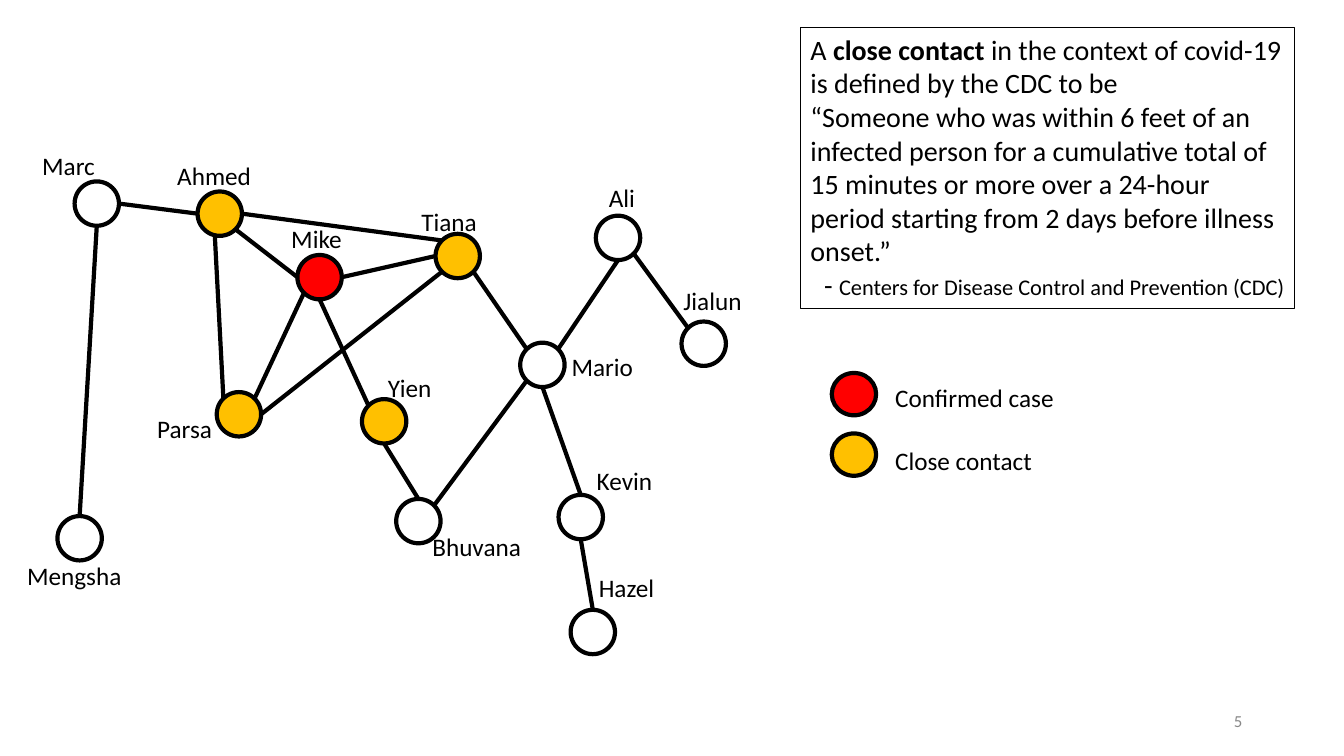
from pptx import Presentation
from pptx.dml.color import RGBColor
from pptx.enum.shapes import MSO_CONNECTOR, MSO_SHAPE
from pptx.enum.text import MSO_ANCHOR, PP_ALIGN
from pptx.oxml.ns import qn
from pptx.util import Inches, Pt

OVAL = MSO_SHAPE.OVAL
STRAIGHT = MSO_CONNECTOR.STRAIGHT
LEFT, RIGHT = PP_ALIGN.LEFT, PP_ALIGN.RIGHT
TOP, MIDDLE = MSO_ANCHOR.TOP, MSO_ANCHOR.MIDDLE

BLACK = RGBColor(0x00, 0x00, 0x00)
WHITE = RGBColor(0xFF, 0xFF, 0xFF)
GRAY = RGBColor(0x88, 0x88, 0x88)
RED = RGBColor(0xFF, 0x00, 0x00)
AMBER = RGBColor(0xFF, 0xC0, 0x00)

FONT = "Calibri"
NODE_SIZE = 0.44
LEGEND_HEIGHT = 0.42
LABEL_HEIGHT = 0.4

# name: (node left, node top, label left, label top, label width, fill)
PEOPLE = {
    "Marc": (0.74, 1.8, 0.32, 1.44, 0.73, WHITE),
    "Ahmed": (1.96, 1.9, 1.66, 1.54, 0.94, AMBER),
    "Mike": (2.95, 2.53, 2.79, 2.17, 0.82, RED),
    "Tiana": (4.32, 2.32, 4.08, 2.0, 1.09, AMBER),
    "Parsa": (2.15, 3.89, 1.46, 4.05, 0.82, AMBER),
    "Yien": (3.59, 3.96, 3.75, 3.64, 0.64, AMBER),
    "Mario": (5.16, 3.4, 5.57, 3.44, 0.82, WHITE),
    "Mengsha": (0.57, 5.12, 0.17, 5.51, 1.15, WHITE),
    "Bhuvana": (3.93, 4.95, 4.19, 5.22, 1.27, WHITE),
    "Ali": (5.91, 2.14, 5.94, 1.76, 0.46, WHITE),
    "Jialun": (6.76, 3.19, 6.68, 2.78, 0.79, WHITE),
    "Kevin": (5.54, 4.91, 5.82, 4.57, 0.78, WHITE),
    "Hazel": (5.66, 6.05, 5.84, 5.63, 0.81, WHITE),
}

SITES = {
    "top": (0.5, 0), "bottom": (0.5, 1), "left": (0, 0.5), "right": (1, 0.5),
    "top left": (0.15, 0.15), "top right": (0.85, 0.15),
    "bottom left": (0.15, 0.85), "bottom right": (0.85, 0.85),
    "lower left": (0.38, 0.85),
}

CONTACTS = [
    ("Marc", "right", "Ahmed", "left"),
    ("Marc", "bottom", "Mengsha", "top"),
    ("Ahmed", "bottom right", "Mike", "left"),
    ("Ahmed", "right", "Tiana", "top left"),
    ("Ahmed", "lower left", "Parsa", "top left"),
    ("Mike", "right", "Tiana", "left"),
    ("Mike", "bottom left", "Parsa", "top right"),
    ("Mike", "bottom", "Yien", "top left"),
    ("Tiana", "bottom left", "Parsa", "right"),
    ("Tiana", "bottom right", "Mario", "top left"),
    ("Yien", "bottom", "Bhuvana", "top"),
    ("Bhuvana", "top right", "Mario", "bottom left"),
    ("Mario", "top right", "Ali", "bottom"),
    ("Mario", "bottom", "Kevin", "top"),
    ("Ali", "bottom right", "Jialun", "top left"),
    ("Kevin", "bottom", "Hazel", "top"),
]

LEGEND = [
    ("Confirmed case", RED, 3.7, 3.74, 1.79),
    ("Close contact", AMBER, 4.3, 4.37, 1.57),
]


def set_attributes(target, values):
    for name, value in values.items():
        setattr(target, name, value)


def set_outline(line, width):
    line.color.rgb = BLACK
    line.width = Pt(width)


def set_fill(shape, color):
    shape.fill.solid()
    shape.fill.fore_color.rgb = color


def add_run(paragraph, text, size, color=BLACK, bold=False):
    run = paragraph.add_run()
    run.text = text
    set_attributes(run.font, {"name": FONT, "size": Pt(size), "bold": bold})
    run.font.color.rgb = color


def add_text_box(slide, left, top, width, height, anchor=TOP):
    box = slide.shapes.add_textbox(
        Inches(left), Inches(top), Inches(width), Inches(height))
    set_attributes(box.text_frame, {"word_wrap": True, "vertical_anchor": anchor})
    return box


def add_label(slide, text, left, top, width, size=18, color=BLACK,
              alignment=LEFT, anchor=TOP):
    box = add_text_box(slide, left, top, width, LABEL_HEIGHT, anchor)
    paragraph = box.text_frame.paragraphs[0]
    paragraph.alignment = alignment
    add_run(paragraph, text, size, color)


def add_circle(slide, left, top, color, height=NODE_SIZE):
    circle = slide.shapes.add_shape(
        OVAL, Inches(left), Inches(top), Inches(NODE_SIZE), Inches(height))
    circle.shadow.inherit = False
    set_fill(circle, color)
    set_outline(circle.line, 3)


def site_position(person, site):
    left, top = PEOPLE[person][:2]
    across, down = SITES[site]
    return Inches(left + across * NODE_SIZE), Inches(top + down * NODE_SIZE)


def add_contact(slide, person, site, other, other_site):
    connector = slide.shapes.add_connector(
        STRAIGHT, *site_position(person, site), *site_position(other, other_site))
    set_outline(connector.line, 3)
    properties = connector._element.spPr
    properties.append(properties.makeelement(qn("a:effectLst"), {}))


def add_definition(slide):
    box = add_text_box(slide, 7.94, 0.27, 4.9, 2.79)
    set_fill(box, WHITE)
    set_outline(box.line, 0.75)
    definition = box.text_frame.paragraphs[0]
    add_run(definition, "A ", 20)
    add_run(definition, "close contact ", 20, bold=True)
    add_run(definition, "in the context of covid-19 is defined by the CDC to be ", 20)
    definition.add_line_break()
    add_run(definition, "“Someone who was within 6 feet of an infected person for a "
            "cumulative total of 15 minutes or more over a 24-hour period "
            "starting from 2 days before illness onset.”", 20)
    credit = box.text_frame.add_paragraph()
    credit.alignment = RIGHT
    add_run(credit, "- ", 20)
    add_run(credit, "Centers for Disease Control and Prevention (CDC)", 16)


def main():
    presentation = Presentation()
    presentation.slide_width = Inches(13.33)
    presentation.slide_height = Inches(7.5)
    slide = presentation.slides.add_slide(presentation.slide_layouts[6])

    for contact in CONTACTS:
        add_contact(slide, *contact)
    for left, top, *_, color in PEOPLE.values():
        add_circle(slide, left, top, color)
    for name, (_, _, left, top, width, _) in PEOPLE.items():
        add_label(slide, name, left, top, width)
    for text, color, circle_top, label_top, width in LEGEND:
        add_circle(slide, 8.25, circle_top, color, LEGEND_HEIGHT)
        add_label(slide, text, 8.78, label_top, width)
    add_definition(slide)
    add_label(slide, "5", 9.42, 6.95, 3, 12, GRAY, RIGHT, MIDDLE)

    presentation.save("out.pptx")


if __name__ == "__main__":
    main()
